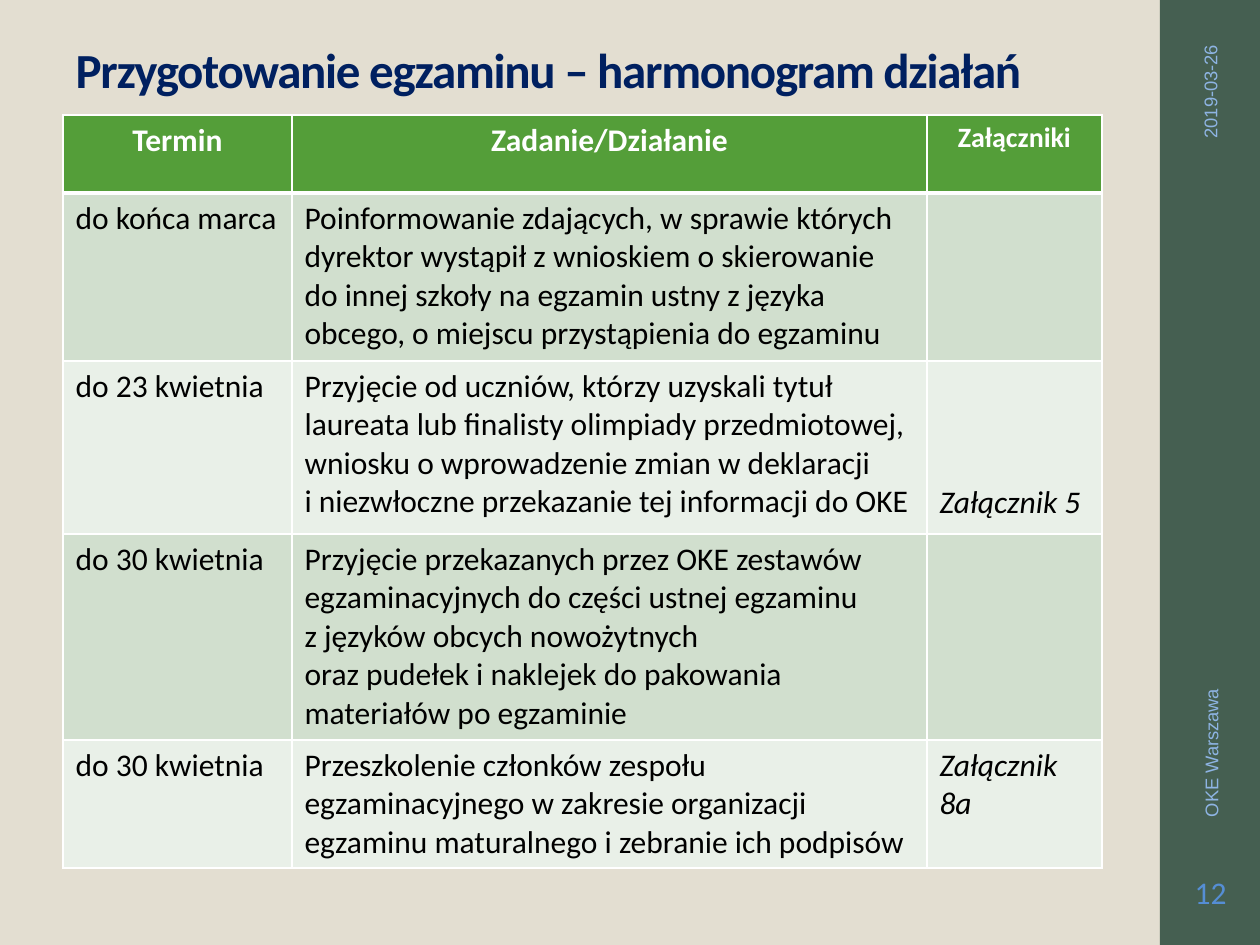
import pptx
import pptx.dml.color
import pptx.enum.shapes
import pptx.enum.text
import pptx.oxml
import pptx.oxml.ns
import pptx.util

ALIGN = pptx.enum.text.PP_ALIGN
ANCHOR = pptx.enum.text.MSO_ANCHOR
WHITE = "FFFFFF"


def px(n):
    return pptx.util.Emu(round(n * 914400 / 126))


def color(value):
    return pptx.dml.color.RGBColor.from_string(value)


class Deck:
    """Holds the style and the current slide, and draws each kind of element."""

    def __init__(self):
        self.font = "Calibri"
        self.prs = pptx.Presentation()
        self.prs.slide_width, self.prs.slide_height = px(1260), px(945)

    def slide(self, background):
        self.s = self.prs.slides.add_slide(self.prs.slide_layouts[5])
        fill = self.s.background.fill
        fill.solid()
        fill.fore_color.rgb = color(background)

    def set_text(self, tf, text, size, hue, align=ALIGN.LEFT, bold=False, italic=False, font=None):
        tf.text = text
        for p in tf.paragraphs:
            p.alignment = align
            p.font.size = pptx.util.Pt(size)
            for r in p.runs:
                r.font.name = font or self.font
                r.font.size = pptx.util.Pt(size)
                r.font.bold, r.font.italic = bold, italic
                r.font.color.rgb = color(hue)

    def title(self, box, text):
        sp = self.s.shapes.title
        sp.left, sp.top, sp.width, sp.height = map(px, box)
        tf = sp.text_frame
        self.set_text(tf, text, 28, "002060", bold=True)
        tf.word_wrap = True
        tf.auto_size = pptx.enum.text.MSO_AUTO_SIZE.NONE
        tf.vertical_anchor = ANCHOR.BOTTOM
        p = tf.paragraphs[0]
        p.line_spacing = 0.9
        p.runs[0].font._element.set("spc", "-70")

    def bar(self, box, fill):
        sp = self.s.shapes.add_shape(pptx.enum.shapes.MSO_SHAPE.RECTANGLE, *map(px, box))
        sp.shadow.inherit = False
        sp.fill.solid()
        sp.fill.fore_color.rgb = color(fill)
        sp.line.fill.background()

    def text(self, box, text, size, hue, align, font=None, rotation=0, inset=13):
        sp = self.s.shapes.add_textbox(*map(px, box))
        sp.rotation = rotation
        tf = sp.text_frame
        tf.word_wrap = True
        tf.vertical_anchor = ANCHOR.MIDDLE
        tf.margin_left = tf.margin_right = px(inset)
        self.set_text(tf, text, size, hue, align, font=font)

    def borders(self, cell, bottom):
        tc_pr = cell._tc.get_or_add_tcPr()
        for side, width in (("L", 1), ("R", 1), ("T", 1), ("B", bottom)):
            tc_pr.append(pptx.oxml.parse_xml(
                f'<a:ln{side} {pptx.oxml.ns.nsdecls("a")} w="{width * 12700}">'
                f'<a:solidFill><a:srgbClr val="{WHITE}"/></a:solidFill></a:ln{side}>'))

    def table(self, left, top, widths, heights, rows):
        frame = self.s.shapes.add_table(
            len(rows), len(widths), px(left), px(top), px(sum(widths)), px(sum(heights)))
        table = frame.table
        for column, width in zip(table.columns, widths):
            column.width = px(width)
        for row, height in zip(table.rows, heights):
            row.height = px(height)
        for i, row in enumerate(rows):
            for j, text in enumerate(row):
                cell = table.cell(i, j)
                self.borders(cell, 1 if i else 3)
                cell.fill.solid()
                if i == 0:
                    cell.fill.fore_color.rgb = color("549E39")
                    self.set_text(cell.text_frame, text, 16 if j == 2 else 18, WHITE,
                                  ALIGN.CENTER, bold=True)
                else:
                    cell.fill.fore_color.rgb = color("D1DFCE" if i % 2 else "E9F0E8")
                    self.set_text(cell.text_frame, text, 18, "000000", italic=j == 2)
        return table


def main():
    deck = Deck()
    deck.slide("E3DED1")
    deck.bar((1160, 0, 100, 945), "455F51")
    deck.title((63, 21, 1068, 84), "Przygotowanie egzaminu – harmonogram działań")
    table = deck.table(63, 115, (229, 635, 175), (78, 168, 173, 206, 128), [
        ("Termin", "Zadanie/Działanie", "Załączniki"),
        ("do końca marca",
         "Poinformowanie zdających, w sprawie których dyrektor wystąpił z wnioskiem "
         "o skierowanie do innej szkoły na egzamin ustny z języka obcego, "
         "o miejscu przystąpienia do egzaminu", ""),
        ("do 23 kwietnia",
         "Przyjęcie od uczniów, którzy uzyskali tytuł laureata lub finalisty olimpiady "
         "przedmiotowej, wniosku o wprowadzenie zmian w deklaracji\n"
         "i niezwłoczne przekazanie tej informacji do OKE", "Załącznik 5"),
        ("do 30 kwietnia",
         "Przyjęcie przekazanych przez OKE zestawów egzaminacyjnych do części ustnej egzaminu\n"
         "z języków obcych nowożytnych\n"
         "oraz pudełek i naklejek do pakowania materiałów po egzaminie", ""),
        ("do 30 kwietnia",
         "Przeszkolenie członków zespołu egzaminacyjnego w zakresie organizacji "
         "egzaminu maturalnego i zebranie ich podpisów", "Załącznik 8a"),
    ])
    attachment = table.cell(2, 2)
    attachment.vertical_anchor = ANCHOR.BOTTOM
    attachment.margin_bottom = px(12)
    deck.text((1079, 144, 262, 38), "2019-03-26", 10.5, "8EB4E3", ALIGN.RIGHT, "Arial", 270)
    deck.text((964, 564, 494, 38), "OKE Warszawa", 10.5, "8EB4E3", ALIGN.LEFT, "Arial", 270)
    deck.text((1163, 851, 95, 82), "12", 18, "558ED5", ALIGN.CENTER, inset=4)
    deck.prs.save("out.pptx")


if __name__ == "__main__":
    main()
